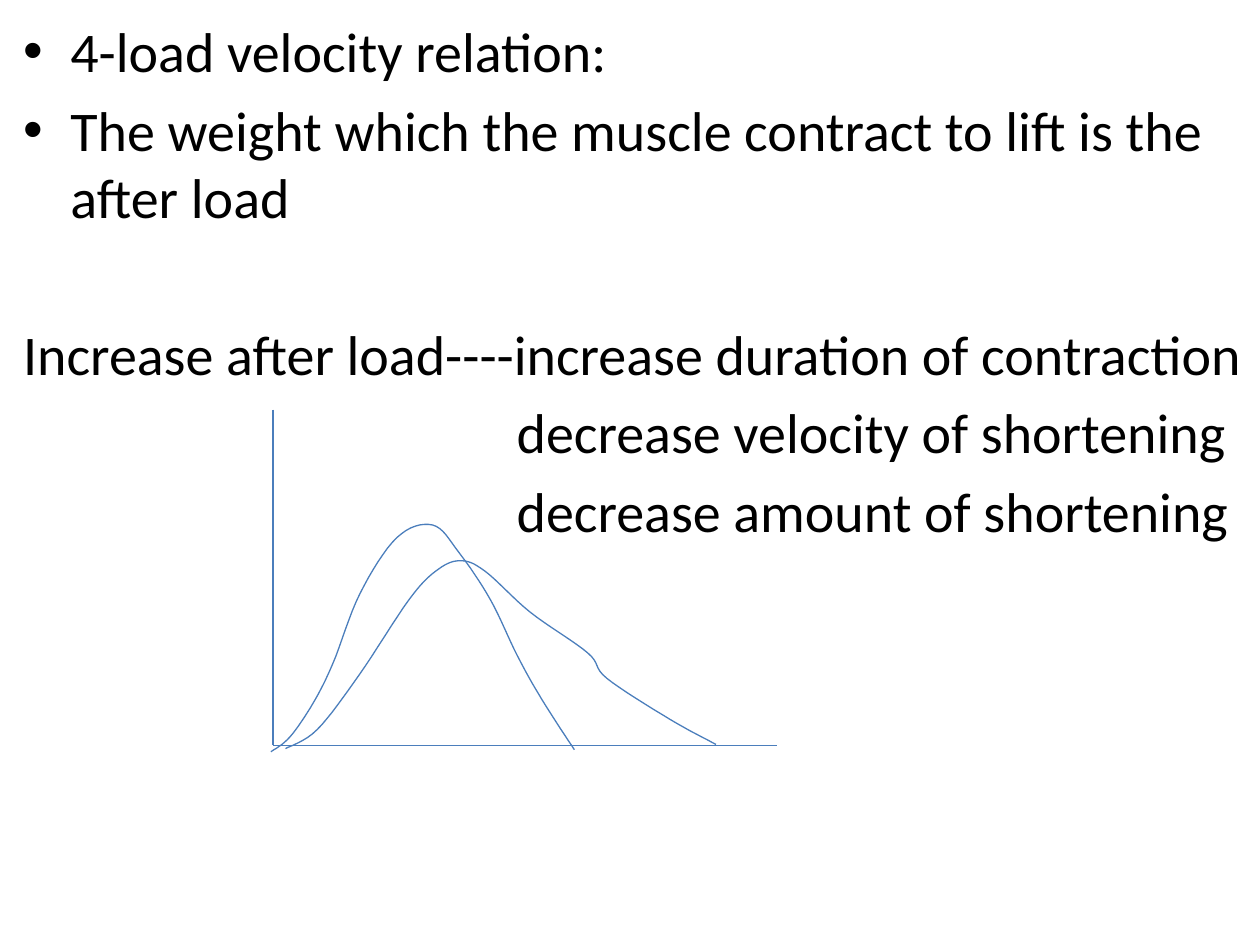
from lxml import etree
from pptx import Presentation
from pptx.dml.color import RGBColor
from pptx.enum.shapes import MSO_CONNECTOR as Connector
from pptx.enum.text import MSO_AUTO_SIZE as AutoSize
from pptx.oxml.ns import qn
from pptx.util import Inches, Pt

COLORS = {"text": "000000", "line": "4B7EBC"}
COLUMNS, ROWS = 120, 90
FONT_SIZE = 32
PARAGRAPH_GAP = 0.2 * FONT_SIZE
SECTION_GAP = 1.6 * FONT_SIZE
BULLET_INDENT, EFFECT_INDENT = 4.5, 47
STEPS_PER_SPAN = 8
UNITS_PER_COLUMN = 100


def style_line(line):
    line.color.rgb = RGBColor.from_string(COLORS["line"])
    line.width = Pt(0.75)


def smooth_curve(knots):
    padded = [knots[0], *knots, knots[-1]]
    points = [knots[0]]
    for before, start, end, after in zip(padded, padded[1:], padded[2:], padded[3:]):
        for step in range(1, STEPS_PER_SPAN + 1):
            t = step / STEPS_PER_SPAN
            points.append(tuple(
                b + t * (c - a) / 2
                + t**2 * (2 * a - 5 * b + 4 * c - d) / 2
                + t**3 * (3 * b - a - 3 * c + d) / 2
                for a, b, c, d in zip(before, start, end, after)
            ))
    return points


presentation = Presentation()
presentation.slide_width = Inches(10)
presentation.slide_height = Inches(7.5)
column = presentation.slide_width // COLUMNS
row = presentation.slide_height // ROWS
slide = presentation.slides.add_slide(presentation.slide_layouts[1])
title = slide.shapes.title
title.element.getparent().remove(title.element)

body = slide.placeholders[1]
body.left, body.top = column, row
body.width, body.height = 119 * column, 87 * row
frame = body.text_frame
frame.word_wrap = True
frame.auto_size = AutoSize.NONE

paragraphs = [
    ("4-load velocity relation:", True, BULLET_INDENT, PARAGRAPH_GAP),
    ("The weight which the muscle contract to lift is the after load", True, BULLET_INDENT, PARAGRAPH_GAP),
    ("Increase after load----increase duration of contraction", False, 0, SECTION_GAP),
    ("decrease velocity of shortening", False, EFFECT_INDENT, PARAGRAPH_GAP),
    ("decrease amount of shortening", False, EFFECT_INDENT, PARAGRAPH_GAP),
]
for index, (text, bulleted, indent, gap) in enumerate(paragraphs):
    paragraph = frame.add_paragraph() if index else frame.paragraphs[0]
    paragraph.space_before = Pt(gap)
    margin = int(indent * column)
    properties = paragraph._p.get_or_add_pPr()
    properties.set("marL", str(margin))
    properties.set("indent", str(-margin if bulleted else 0))
    if bulleted:
        etree.SubElement(properties, qn("a:buChar")).set("char", "•")
    else:
        etree.SubElement(properties, qn("a:buNone"))
    run = paragraph.add_run()
    run.text = text
    run.font.name = "Calibri"
    run.font.size = Pt(FONT_SIZE)
    run.font.color.rgb = RGBColor.from_string(COLORS["text"])

axis_left, axis_right = 26, 74
axis_top, axis_bottom = 39, 71
axes = {
    "shortening": (axis_left, axis_top, axis_left, axis_bottom),
    "time": (axis_left, axis_bottom, axis_right, axis_bottom),
}
for left, top, right, bottom in axes.values():
    axis = slide.shapes.add_connector(
        Connector.STRAIGHT, left * column, top * row, right * column, bottom * row
    )
    style_line(axis.line)
    etree.SubElement(axis._element.spPr, qn("a:effectLst"))

contractions = {
    "light load": {
        "rise": [(25.8, 71.6), (27.6, 70.2), (29.8, 67), (31.7, 63.2), (34.3, 56.5), (37.8, 51.2)],
        "peak": [(41.2, 50)],
        "fall": [(43.7, 52.6), (46.7, 57.1), (49.3, 62.5), (51.6, 66.6), (54.7, 71.4)],
    },
    "heavy load": {
        "rise": [(27.2, 71.3), (30.2, 69.5), (34.2, 64.3), (38.9, 57.2), (41.5, 54.4)],
        "peak": [(43.8, 53.4)],
        "fall": [(46.2, 54.4), (50.5, 58.3), (56, 62.2), (57.8, 64.6), (63.8, 68.5), (68.2, 70.9)],
    },
}
for phases in contractions.values():
    knots = phases["rise"] + phases["peak"] + phases["fall"]
    points = [(x * UNITS_PER_COLUMN, y * UNITS_PER_COLUMN) for x, y in smooth_curve(knots)]
    builder = slide.shapes.build_freeform(
        *points[0], scale=(column / UNITS_PER_COLUMN, row / UNITS_PER_COLUMN)
    )
    builder.add_line_segments(points[1:], close=False)
    curve = builder.convert_to_shape()
    curve.fill.background()
    curve.shadow.inherit = False
    style_line(curve.line)

presentation.save("out.pptx")
